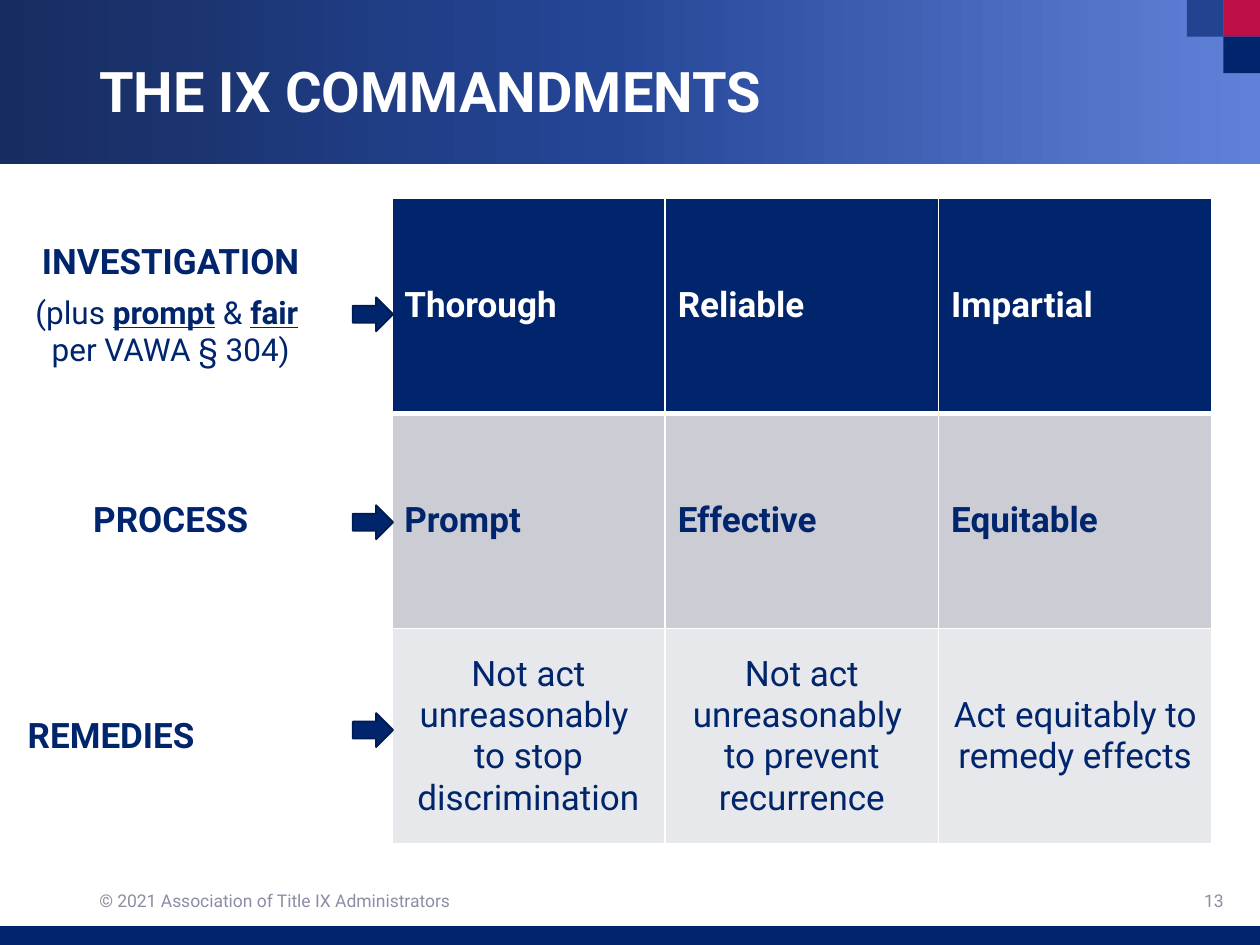
from copy import deepcopy

from lxml import etree
from pptx import Presentation
from pptx.dml.color import RGBColor
from pptx.enum.shapes import MSO_SHAPE as SHAPE
from pptx.enum.text import MSO_ANCHOR as ANCHOR, PP_ALIGN as ALIGN
from pptx.oxml.ns import qn
from pptx.util import Inches, Pt

FONT = "Roboto"
C = {"navy": "00256D", "blue": "23428F", "red": "BE1047", "white": "FFFFFF",
     "gray": "8C8EA3", "edge": "001B51", "mid": "CCCDD4", "light": "E7E8EB"}
GRADIENT = [(0, "172C60"), (0.48, "254697"), (1, "5F82D8")]

# Content: row label, then its three requirements (one string per paragraph)
ROWS = [
    (["INVESTIGATION"], [["Thorough"], ["Reliable"], ["Impartial"]]),
    (["PROCESS"], [["Prompt"], ["Effective"], ["Equitable"]]),
    (["REMEDIES"], [["Not act unreasonably ", "to stop discrimination"],
                    ["Not act unreasonably ", "to prevent recurrence"],
                    ["Act equitably to remedy effects"]]),
]
# Cell fill, text colour, bold, alignment; then the label's alignment
ROW_STYLES = [("navy", "white", True, ALIGN.LEFT, ALIGN.CENTER),
              ("mid", "navy", True, ALIGN.LEFT, ALIGN.CENTER),
              ("light", "navy", False, ALIGN.CENTER, ALIGN.LEFT)]
# Note under the first label: text, emphasised; None is a line break
NOTE = [("(plus ", False), ("prompt", True), (" & ", False), ("fair", True),
        (" ", False), None, ("per VAWA § 304)", False)]

# Left, top, width, height, colour
CORNER, BAR_H = 0.29, 0.15
BLOCKS = [(10 - CORNER, 0, CORNER, CORNER, "red"),
          (10 - 2 * CORNER, 0, CORNER, CORNER, "blue"),
          (10 - CORNER, CORNER, CORNER, CORNER, "navy"),
          (0, 7.5 - BAR_H, 10, BAR_H, "navy")]
TEXTS = [("THE IX COMMANDMENTS", (0.69, 0.29, 8.62, 0.85), 32, "white", True, ALIGN.LEFT),
         ("© 2021 Association of Title IX Administrators",
          (0.69, 6.95, 3.38, 0.4), 10, "gray", False, ALIGN.LEFT),
         ("13", (7.56, 6.95, 2.25, 0.4), 10, "gray", False, ALIGN.RIGHT)]
TABLE_X, TABLE_Y, ROW_H = 0.12, 1.57, 1.71
COLS = [2.47, 0.52, 2.17, 2.17, 2.17]
ARROW_X, ARROW_Y, ARROW_STEP = 2.8, 2.36, 1.65


def rgb(name):
    return RGBColor.from_string(C.get(name, name))


def style(p, size, color, bold, align):
    p.alignment = align
    f = p.font
    f.name, f.size, f.bold = FONT, Pt(size), bold
    f.color.rgb = rgb(color)


def add_shape(kind, box, fill, line=None):
    s = slide.shapes.add_shape(kind, *map(Inches, box))
    s.shadow.inherit = False
    if fill:
        s.fill.solid()
        s.fill.fore_color.rgb = rgb(fill)
    if line:
        s.line.color.rgb = rgb(line)
        s.line.width = Pt(1)
    else:
        s.line.fill.background()
    return s


def fill_cell(cell, lines, fill, color, bold, align):
    cell.fill.solid()
    cell.fill.fore_color.rgb = rgb(fill)
    cell.vertical_anchor = ANCHOR.MIDDLE
    tf = cell.text_frame
    for i, line in enumerate(lines):
        p = tf.paragraphs[0] if i == 0 else tf.add_paragraph()
        p.text = line
        style(p, 20, color, bold, align)


def add_borders(cell, bottom):
    tc_pr = cell._tc.get_or_add_tcPr()
    sides = [("lnL", 1), ("lnR", 1), ("lnT", 1), ("lnB", bottom)]
    for i, (tag, width) in enumerate(sides):
        ln = etree.Element(qn("a:" + tag), w=str(Pt(width)))
        fill = etree.SubElement(ln, qn("a:solidFill"))
        etree.SubElement(fill, qn("a:srgbClr"), val=C["white"])
        tc_pr.insert(i, ln)  # borders come before the fill


prs = Presentation()
prs.slide_width, prs.slide_height = Inches(10), Inches(7.5)
slide = prs.slides.add_slide(prs.slide_layouts[6])

# Header band with a three-stop gradient
band = add_shape(SHAPE.RECTANGLE, (0, 0, 10, 1.3), None)
band.fill.gradient()
band.fill.gradient_angle = 0
stop_list = band._element.spPr.find(qn("a:gradFill")).find(qn("a:gsLst"))
stop_list.append(deepcopy(stop_list[-1]))
for stop, (position, color) in zip(band.fill.gradient_stops, GRADIENT):
    stop.position = position
    stop.color.rgb = rgb(color)

# Corner squares and bottom bar
for *box, color in BLOCKS:
    add_shape(SHAPE.RECTANGLE, box, color)

# Title, copyright line and page number
for text, box, size, color, bold, align in TEXTS:
    tf = slide.shapes.add_textbox(*map(Inches, box)).text_frame
    tf.word_wrap = True
    tf.vertical_anchor = ANCHOR.MIDDLE
    p = tf.paragraphs[0]
    p.text = text
    style(p, size, color, bold, align)

# Table: labels, arrow gutter, requirements
table = slide.shapes.add_table(
    len(ROWS), len(COLS), Inches(TABLE_X), Inches(TABLE_Y),
    Inches(sum(COLS)), Inches(ROW_H * len(ROWS))).table
table.first_row = table.horz_banding = False
for column, width in zip(table.columns, COLS):
    column.width = Inches(width)
for r, ((label, items), (fill, color, bold, align, label_align)) in enumerate(zip(ROWS, ROW_STYLES)):
    table.rows[r].height = Inches(ROW_H)
    fill_cell(table.cell(r, 0), label, "white", "navy", True, label_align)
    table.cell(r, 1).fill.background()
    for c, lines in enumerate(items, start=2):
        fill_cell(table.cell(r, c), lines, fill, color, bold, align)
    for c in range(len(COLS)):
        add_borders(table.cell(r, c), 3 if r == 0 else 1)

# Note under the first label
p = table.cell(0, 0).text_frame.add_paragraph()
style(p, 18, "navy", False, ALIGN.CENTER)
p.space_before = Pt(7)
for part in NOTE:
    if part is None:
        p.add_line_break()
        continue
    run = p.add_run()
    run.text, emphasised = part
    if emphasised:
        run.font.bold = run.font.underline = True

# Arrows from labels to requirements
for i in range(len(ROWS)):
    add_shape(SHAPE.RIGHT_ARROW, (ARROW_X, ARROW_Y + i * ARROW_STEP, 0.32, 0.27), "navy", "edge")

prs.save("out.pptx")
